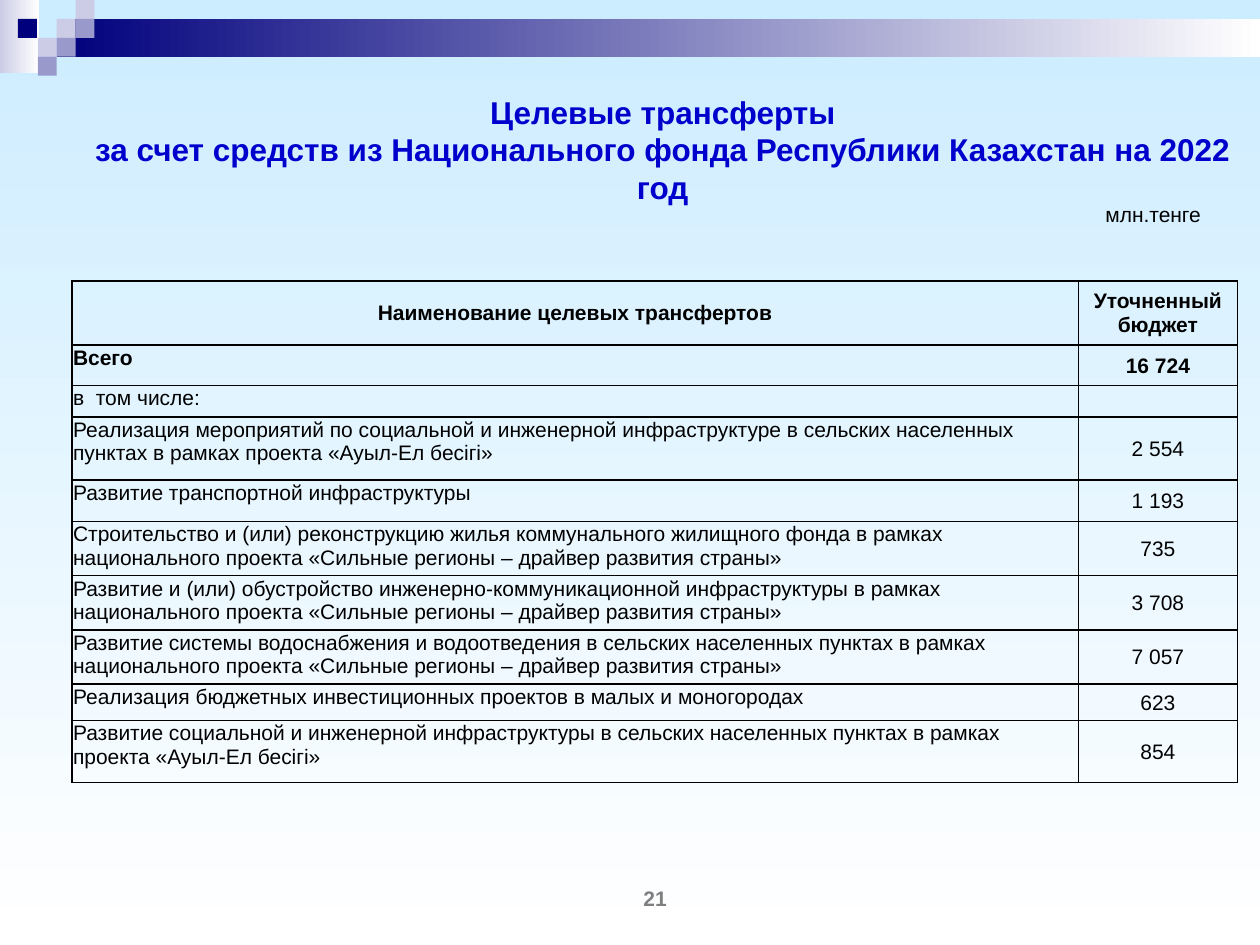
import pptx
import pptx.util
import pptx.dml.color
import pptx.enum.shapes
import pptx.enum.text
from lxml import etree

Inches, Pt = pptx.util.Inches, pptx.util.Pt
RGB = pptx.dml.color.RGBColor.from_string
ALIGN, ANCHOR = pptx.enum.text.PP_ALIGN, pptx.enum.text.MSO_ANCHOR

TITLE = ("Целевые трансферты\v"
         "за счет средств из Национального фонда Республики Казахстан на 2022 год")
UNIT = "млн.тенге"
PAGE = "21"
HEAD = ("Наименование целевых трансфертов", "Уточненный бюджет")
STRONG = "национального проекта «Сильные регионы – драйвер развития страны»"
# name, value, row height
ROWS = [
    ("Всего", "16 724", 0.32),
    ("в  том числе:", "", 0.25),
    ("Реализация мероприятий по социальной и инженерной инфраструктуре в сельских "
     "населенных пунктах в рамках проекта «Ауыл-Ел бесігі»", "2 554", 0.5),
    ("Развитие транспортной инфраструктуры", "1 193", 0.33),
    ("Строительство и (или) реконструкцию жилья коммунального жилищного фонда "
     "в рамках " + STRONG, "735", 0.43),
    ("Развитие и (или) обустройство инженерно-коммуникационной инфраструктуры "
     "в рамках " + STRONG, "3 708", 0.43),
    ("Развитие системы водоснабжения и водоотведения в сельских населенных "
     "пунктах в рамках " + STRONG, "7 057", 0.43),
    ("Реализация бюджетных инвестиционных проектов в малых и моногородах",
     "623", 0.29),
    ("Развитие социальной и инженерной инфраструктуры в сельских населенных "
     "пунктах в рамках проекта «Ауыл-Ел бесігі»", "854", 0.49),
]
HEAD_TALL = 0.51
COLS = (7.99, 1.26)

THEME = {
    "font": "Arial", "big": 18, "text": 12,
    "title": "0000CC", "ink": "000000", "grey": "7F7F7F",
    "sky": "CCECFF", "white": "FFFFFF",
    "navy": "00007D", "pale": "CCCCE6", "mid": "9999CC",
}
UNIT_SQ = 0.15
# column, row, colour of each small square
SQUARES = [(3, 1, "pale"), (4, 0, "pale"), (4, 1, "mid"), (2, 2, "pale"),
           (0.95, 1, "navy"), (3, 2, "mid"), (2, 3, "mid")]


def blend(fill, start, angle):
    """Fade from a theme colour to white; the angle runs counter-clockwise."""
    fill.gradient()
    fill.gradient_angle = angle
    for stop, name, pos in zip(fill.gradient_stops, (start, "white"), (0, 1)):
        stop.color.rgb = RGB(THEME[name])
        stop.position = pos


def block(slide, x, y, w, h):
    shape = slide.shapes.add_shape(pptx.enum.shapes.MSO_SHAPE.RECTANGLE,
                                   Inches(x), Inches(y), Inches(w), Inches(h))
    shape.shadow.inherit = False
    shape.line.fill.background()
    return shape


def write(frame, text, align, size="text", ink="ink", bold=False):
    frame.word_wrap = True
    frame.text = text
    for par in frame.paragraphs:
        par.alignment = align
        for run in par.runs:
            font = run.font
            font.name, font.size, font.bold = THEME["font"], Pt(THEME[size]), bold
            font.color.rgb = RGB(THEME[ink])


def label(slide, box, text, align, **look):
    frame = slide.shapes.add_textbox(*map(Inches, box)).text_frame
    frame.vertical_anchor = ANCHOR.MIDDLE
    write(frame, text, align, **look)


def border(cell):
    props = cell._tc.get_or_add_tcPr()
    for side in "LRTB":
        line = etree.SubElement(props, pptx.oxml.ns.qn("a:ln" + side), w=str(Pt(1)))
        fill = etree.SubElement(line, pptx.oxml.ns.qn("a:solidFill"))
        etree.SubElement(fill, pptx.oxml.ns.qn("a:srgbClr"), val=THEME["ink"])
    cell.fill.background()


def fill_cell(cell, text, head, left, bold):
    border(cell)
    pads = (0.1, 0.05, 0.1, 0.05) if head else (0.01, 0.01, 0.01, 0)
    (cell.margin_left, cell.margin_top,
     cell.margin_right, cell.margin_bottom) = map(Inches, pads)
    top = left and not head
    cell.vertical_anchor = ANCHOR.TOP if top else ANCHOR.MIDDLE
    write(cell.text_frame, text, ALIGN.LEFT if top else ALIGN.CENTER, bold=bold)
    if not text:  # keeps the empty row low
        etree.SubElement(cell.text_frame.paragraphs[0]._p,
                         pptx.oxml.ns.qn("a:endParaRPr"),
                         sz=str(THEME["text"] * 100))


def add_grid(slide):
    rows = [(*HEAD, HEAD_TALL)] + ROWS
    tall = sum(row[2] for row in rows)
    grid = slide.shapes.add_table(len(rows), len(COLS), Inches(0.57), Inches(2.23),
                                  Inches(sum(COLS)), Inches(tall)).table
    grid.first_row = grid.horz_banding = False
    for col, wide in zip(grid.columns, COLS):
        col.width = Inches(wide)
    for r, (name, value, high) in enumerate(rows):
        grid.rows[r].height = Inches(high)
        for c, text in enumerate((name, value)):
            fill_cell(grid.cell(r, c), text, r == 0, c == 0, r < 2)


def add_decor(slide):
    blend(slide.background.fill, "sky", 270)
    blend(block(slide, 0, 0, 0.31, 0.58).fill, "pale", 0)
    blend(block(slide, 0.45, 0.15, 9.55, 0.3).fill, "navy", 0)
    for col, row, name in SQUARES:
        fill = block(slide, col * UNIT_SQ, row * UNIT_SQ, UNIT_SQ, UNIT_SQ).fill
        fill.solid()
        fill.fore_color.rgb = RGB(THEME[name])


def main():
    deck = pptx.Presentation()
    deck.slide_width, deck.slide_height = Inches(10), Inches(7.5)
    slide = deck.slides.add_slide(deck.slide_layouts[5])
    add_decor(slide)
    title = slide.shapes.title
    title.left, title.top, title.width, title.height = map(
        Inches, (0.49, 0.95, 9.54, 0.47))
    title.text_frame.auto_size = pptx.enum.text.MSO_AUTO_SIZE.NONE
    title.text_frame.vertical_anchor = ANCHOR.MIDDLE
    write(title.text_frame, TITLE, ALIGN.CENTER, size="big", ink="title", bold=True)
    add_grid(slide)
    label(slide, (8.25, 1.58, 1.38, 0.24), UNIT, ALIGN.RIGHT)
    label(slide, (4.2, 7.01, 2, 0.24), PAGE, ALIGN.CENTER, ink="grey", bold=True)
    deck.save("out.pptx")


if __name__ == "__main__":
    main()
